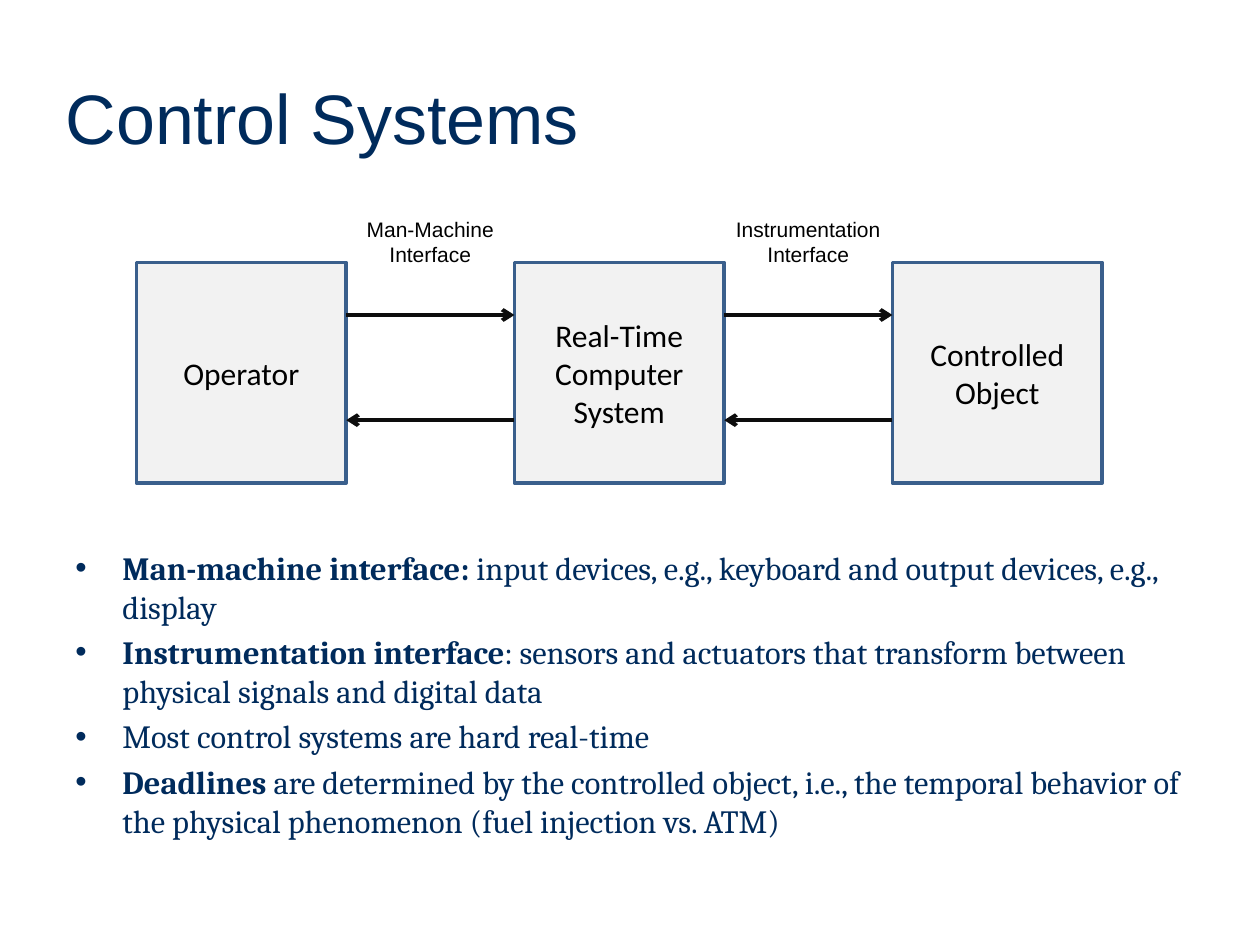
from dataclasses import dataclass

from lxml import etree
from pptx import Presentation
from pptx.dml.color import RGBColor
from pptx.enum.shapes import MSO_CONNECTOR, MSO_SHAPE
from pptx.enum.text import MSO_ANCHOR, MSO_AUTO_SIZE, PP_ALIGN
from pptx.oxml.ns import qn
from pptx.util import Cm, Pt

RECT = MSO_SHAPE.RECTANGLE
STRAIGHT = MSO_CONNECTOR.STRAIGHT
LEFT, CENTER = PP_ALIGN.LEFT, PP_ALIGN.CENTER
TOP, MIDDLE = MSO_ANCHOR.TOP, MSO_ANCHOR.MIDDLE
NO_FIT = MSO_AUTO_SIZE.NONE
TITLE_ONLY = 5


@dataclass(frozen=True)
class Theme:
    navy: RGBColor = RGBColor(0x00, 0x2B, 0x5C)
    black: RGBColor = RGBColor(0, 0, 0)
    arrow: RGBColor = RGBColor(0x0D, 0x0D, 0x0D)
    box_fill: RGBColor = RGBColor(0xF2, 0xF2, 0xF2)
    box_line: RGBColor = RGBColor(0x3A, 0x5F, 0x8C)
    title_size: float = 40
    body_size: float = 18.5
    box_size: float = 18
    label_size: float = 12

    def font(self, name, size, color):
        return {"name": name, "size": Pt(size), "color": color}


class SlideBuilder:
    def __init__(self, prs, theme):
        self.theme = theme
        self.s = prs.slides.add_slide(prs.slide_layouts[TITLE_ONLY])

    def format_frame(self, tf, wrap, anchor):
        frame = {"word_wrap": wrap, "vertical_anchor": anchor, "auto_size": NO_FIT}
        for key, value in frame.items():
            setattr(tf, key, value)

    def add_text(self, p, text, style, align, bold=False):
        p.alignment = align
        r = p.add_run()
        r.text = text
        for key, value in {**style, "bold": bold}.items():
            if key == "color":
                r.font.color.rgb = value
            else:
                setattr(r.font, key, value)

    def title(self, text, left, top, width, height):
        sp = self.s.shapes.title
        place = {"left": left, "top": top, "width": width, "height": height}
        for key, value in place.items():
            setattr(sp, key, Cm(value))
        self.format_frame(sp.text_frame, True, MIDDLE)
        style = self.theme.font("Arial", self.theme.title_size, self.theme.navy)
        self.add_text(sp.text_frame.paragraphs[0], text, style, LEFT)

    def text_box(self, left, top, width, height, wrap):
        sp = self.s.shapes.add_textbox(Cm(left), Cm(top), Cm(width), Cm(height))
        self.format_frame(sp.text_frame, wrap, TOP)
        return sp.text_frame

    def bullets(self, items, left, top, width, height, indent):
        """Each item is a bold lead and the plain text that follows it."""
        tf = self.text_box(left, top, width, height, True)
        style = self.theme.font("Cambria", self.theme.body_size, self.theme.navy)
        for i, (lead, rest) in enumerate(items):
            p = tf.add_paragraph() if i else tf.paragraphs[0]
            pPr = p._p.get_or_add_pPr()
            pPr.set("marL", str(Cm(indent)))
            pPr.set("indent", str(-Cm(indent)))
            etree.SubElement(pPr, qn("a:buFont"), typeface="Arial")
            etree.SubElement(pPr, qn("a:buChar"), char="•")
            if i:
                p.space_before = Pt(0.2 * self.theme.body_size)
            if lead:
                self.add_text(p, lead, style, LEFT, True)
            self.add_text(p, rest, style, LEFT)

    def box(self, text, left, top, width, height):
        sp = self.s.shapes.add_shape(RECT, Cm(left), Cm(top), Cm(width), Cm(height))
        sp.shadow.inherit = False
        sp.fill.solid()
        sp.fill.fore_color.rgb = self.theme.box_fill
        sp.line.color.rgb = self.theme.box_line
        sp.line.width = Pt(2)
        self.format_frame(sp.text_frame, True, MIDDLE)
        style = self.theme.font("Calibri", self.theme.box_size, self.theme.black)
        self.add_text(sp.text_frame.paragraphs[0], text, style, CENTER)

    def arrow(self, start, end, y):
        line = self.s.shapes.add_connector(STRAIGHT, Cm(start), Cm(y), Cm(end), Cm(y))
        line.line.color.rgb = self.theme.arrow
        line.line.width = Pt(2.25)
        ln = line._element.spPr.find(qn("a:ln"))
        etree.SubElement(ln, qn("a:tailEnd"), type="arrow")
        etree.SubElement(line._element.spPr, qn("a:effectLst"))

    def label(self, lines, center, top, width, height):
        tf = self.text_box(center - width / 2, top, width, height, False)
        style = self.theme.font("Arial", self.theme.label_size, self.theme.black)
        for i, text in enumerate(lines):
            p = tf.add_paragraph() if i else tf.paragraphs[0]
            self.add_text(p, text, style, CENTER)


def main():
    prs = Presentation()
    prs.slide_width, prs.slide_height = Cm(25.4), Cm(19.05)
    slide = SlideBuilder(prs, Theme())

    slide.title("Control Systems", 1.07, 1.07, 23.06, 2.54)
    slide.bullets([
        ("Man-machine interface:",
         " input devices, e.g., keyboard and output devices, e.g., display"),
        ("Instrumentation interface",
         ": sensors and actuators that transform between physical signals"
         " and digital data"),
        ("", "Most control systems are hard real-time"),
        ("Deadlines",
         " are determined by the controlled object, i.e., the temporal behavior"
         " of the physical phenomenon (fuel injection vs. ATM)"),
    ], 1.27, 10.92, 22.86, 6.65, 0.95)

    first, pitch, box_top, box_width, box_height = 2.75, 7.62, 5.29, 4.23, 4.45
    blocks = ["Operator", "Real-Time Computer System", "Controlled Object"]
    for i, text in enumerate(blocks):
        slide.box(text, first + i * pitch, box_top, box_width, box_height)

    interfaces = [("Man-Machine", "Interface"), ("Instrumentation", "Interface")]
    for i, lines in enumerate(interfaces):
        start = first + i * pitch + box_width
        end = first + (i + 1) * pitch
        slide.arrow(start, end, 6.35)
        slide.arrow(end, start, 8.47)
        slide.label(lines, (start + end) / 2, 4.24, 3.4, 1.27)

    prs.save("out.pptx")


if __name__ == "__main__":
    main()
